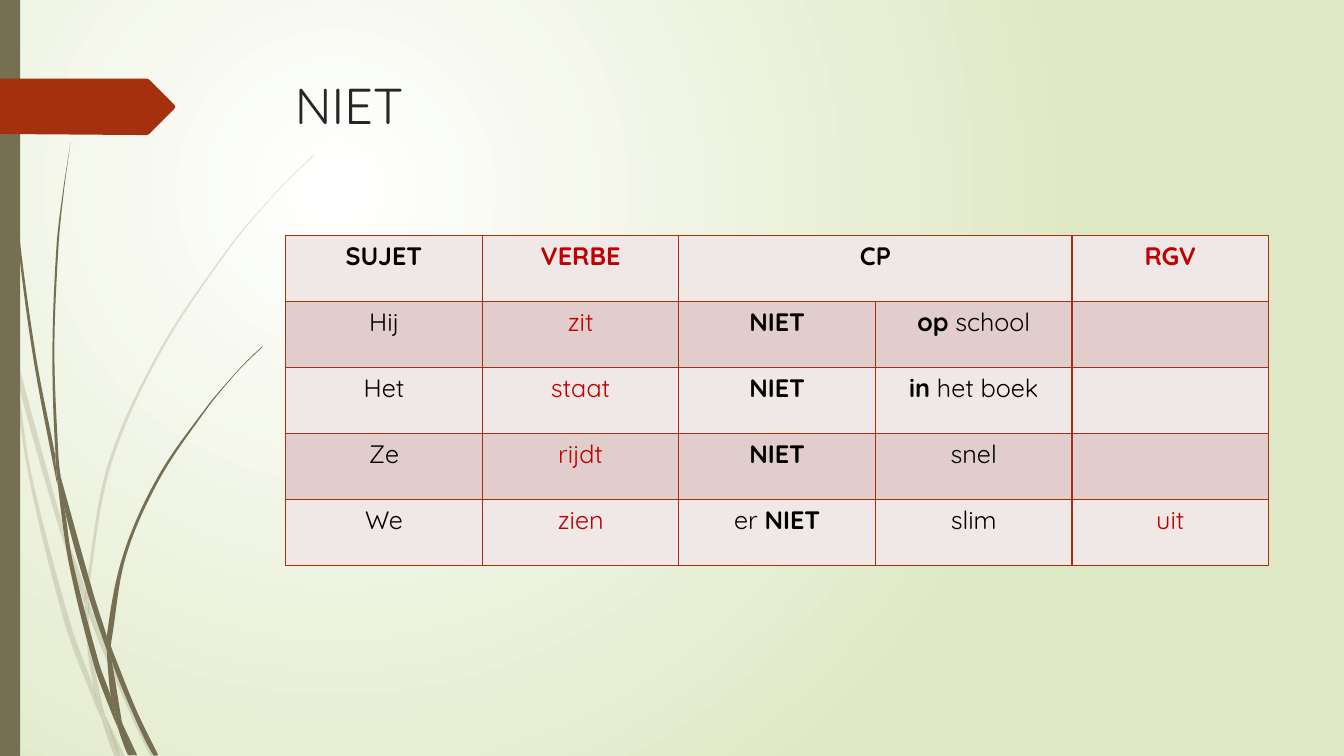
"""Build a Dutch grammar slide with a table on the place of NIET."""
from pptx import Presentation
from pptx.dml.color import RGBColor
from pptx.enum.shapes import MSO_SHAPE as Shape
from pptx.enum.text import MSO_ANCHOR as Anchor, MSO_AUTO_SIZE as AutoSize, PP_ALIGN as Align
from pptx.oxml import parse_xml
from pptx.oxml.ns import nsdecls
from pptx.util import Cm, Pt

FONT = "Quicksand"
CM_PER_UNIT = 2.54
COLORS = {
    "olive": "766F54", "rust": "A53010", "red": "C00000", "black": "000000",
    "title": "262626", "light": "F0E8E7", "dark": "E1CDCC",
    "center": "FFFFFF", "edge": "DFE8C4",
}
TITLE = "NIET"
ROWS = [
    ("*SUJET*", "*VERBE*", "*CP*", "", "*RGV*"),
    ("Hij", "zit", "*NIET*", "*op* school", ""),
    ("Het", "staat", "*NIET*", "*in* het boek", ""),
    ("Ze", "rijdt", "*NIET*", "snel", ""),
    ("We", "zien", "er *NIET*", "slim", "uit"),
]
COLUMN_COLORS = ("black", "red", "black", "black", "red")
PALE_GRASS = [
    [(0.11, 3.5), (0.09, 3.22), (0, 2.82), (0, 2.99), (0.1, 3.44)],
    [(0.58, 5.22), (0.84, 5.99), (0.85, 5.86), (0.62, 5.2), (0.14, 3.45), (0.17, 3.76)],
    [(0.92, 6.07), (0.88, 5.96), (0.88, 6.1), (1.23, 6.94), (1.5, 7.51), (1.55, 7.51),
     (1.27, 6.92)],
    [(1.19, 7.51), (1.24, 7.51), (1.05, 7.11)],
    [(0.93, 6.83), (0.7, 6.19), (0.31, 4.69), (0.17, 3.76), (0.11, 3.5), (0.28, 4.7),
     (0.65, 6.21), (0.92, 6.93), (1.01, 7.14), (0.99, 7.07)],
    [(0.84, 5.99), (0.87, 6.46), (0.93, 6.83), (0.96, 6.92), (1.05, 7.11), (1.03, 7.06),
     (0.91, 6.46), (0.88, 6.1), (0.88, 6.08)],
    [(0.88, 5.84), (1.1, 4.62), (1.6, 3.49), (2.29, 2.45), (2.68, 1.98), (2.9, 1.75),
     (3.12, 1.54), (3.12, 1.53), (2.89, 1.75), (2.68, 1.97), (2.28, 2.44), (1.58, 3.48),
     (1.07, 4.61), (0.85, 5.84), (0.85, 5.86), (0.88, 5.96)],
    [(1.01, 7.14), (1.14, 7.51), (1.19, 7.51)],
    [(0.88, 6.08), (0.88, 6.1), (0.88, 5.96), (0.85, 5.86), (0.84, 5.99)],
    [(0.96, 6.92), (0.93, 6.83), (0.99, 7.07), (1.01, 7.14), (1.19, 7.51), (1.05, 7.11)],
]
DARK_GRASS = [
    [(0.07, 1.1), (0.17, 2.33), (0.33, 3.55), (0.56, 4.77), (0.57, 4.81), (0.55, 4.57),
     (0.55, 4.53), (0.36, 3.55), (0.19, 2.32), (0.08, 1.09), (0.05, 0.48), (0.04, 0),
     (0.03, 0), (0.04, 0.48)],
    [(0.88, 5.92), (1.06, 6.45), (1.06, 6.33), (1.06, 6.31), (0.93, 5.9), (0.6, 4.72),
     (0.64, 5.05)],
    [(1.13, 6.49), (1.1, 6.41), (1.11, 6.56), (1.32, 7.08), (1.52, 7.49), (1.57, 7.49),
     (1.36, 7.06)],
    [(1.1, 6.91), (0.98, 6.57), (0.72, 5.56), (0.64, 5.05), (0.57, 4.77), (0.68, 5.57),
     (0.93, 6.59), (1.11, 7.08), (1.17, 7.22), (1.16, 7.17)],
    [(0.6, 4.72), (0.58, 4.53), (0.54, 3.49), (0.58, 2.45), (0.63, 1.93), (0.7, 1.41),
     (0.62, 1.93), (0.56, 2.45), (0.52, 3.49), (0.55, 4.49)],
    [(1.33, 7.49), (1.36, 7.49), (1.22, 7.19)],
    [(0.57, 4.77), (0.64, 5.05), (0.6, 4.72), (0.55, 4.49), (0.55, 4.53)],
    [(1.11, 6.33), (1.25, 5.52), (1.58, 4.76), (2.05, 4.06), (2.31, 3.74), (2.45, 3.59),
     (2.61, 3.44), (2.6, 3.44), (2.45, 3.58), (2.31, 3.73), (2.04, 4.05), (1.56, 4.74),
     (1.22, 5.51), (1.06, 6.31), (1.1, 6.41)],
    [(1.17, 7.22), (1.27, 7.49), (1.31, 7.49)],
    [(1.06, 6.45), (1.1, 6.91), (1.16, 7.06), (1.22, 7.19), (1.21, 7.16), (1.11, 6.56),
     (1.09, 6.51)],
    [(1.06, 6.45), (1.09, 6.51), (1.11, 6.56), (1.1, 6.41), (1.06, 6.31), (1.06, 6.33)],
    [(1.16, 7.06), (1.1, 6.91), (1.16, 7.17), (1.17, 7.22), (1.3, 7.49), (1.33, 7.49),
     (1.22, 7.19)],
]
ARROW = [(1.73, 1.08), (1.48, 1.33), (1.46, 1.34), (1.36, 1.34), (0, 1.33), (0, 0.78),
         (1.36, 0.78), (1.46, 0.78), (1.48, 0.79), (1.73, 1.04), (1.74, 1.06)]


def rgb(name):
    return RGBColor.from_string(COLORS[name])


def write(tf, text, size=18, color="black", align=Align.CENTER):
    """Write text in one paragraph; parts between asterisks are bold."""
    p = tf.paragraphs[0]
    p.alignment = align
    for i, part in enumerate(text.split("*")):
        if part:
            r = p.add_run()
            r.text = part
            r.font.name, r.font.size = FONT, Pt(size)
            r.font.bold = i % 2 == 1
            r.font.color.rgb = rgb(color)


def paint(sp, color, alpha=100):
    sp.shadow.inherit = False
    sp.fill.solid()
    sp.fill.fore_color.rgb = rgb(color)
    sp.line.fill.background()
    if alpha < 100:
        clr = sp.element.spPr.xpath("./a:solidFill/a:srgbClr")[0]
        clr.append(parse_xml(f'<a:alpha {nsdecls("a")} val="{alpha * 1000}"/>'))


def add_outline(s, pts):
    corners = [(Cm(x * CM_PER_UNIT), Cm(y * CM_PER_UNIT)) for x, y in pts]
    builder = s.shapes.build_freeform(*corners[0], scale=1.0)
    builder.add_line_segments(corners[1:] + corners[:1], close=True)
    return builder.convert_to_shape()


def direction(before, here, after):
    """Return the unit tangent at a point, or zero at a sharp tip."""
    turn = ((here - before).conjugate() * (after - here)).real
    return (after - before) / abs(after - before) if turn > 0 else 0


def bend(sp):
    """Turn the straight sides of an outline into smooth curves."""
    pts = [complex(int(pt.get("x")), int(pt.get("y")))
           for pt in sp.element.xpath(".//a:path//a:pt")][:-1]
    n = len(pts)
    tangents = [direction(pts[i - 1], pts[i], pts[(i + 1) % n]) for i in range(n)]
    for i, side in enumerate(sp.element.xpath(".//a:path/a:lnTo")):
        j = (i + 1) % n
        reach = abs(pts[j] - pts[i]) / 3
        stops = (pts[i] + tangents[i] * reach, pts[j] - tangents[j] * reach, pts[j])
        xml = "".join(f'<a:pt x="{round(z.real)}" y="{round(z.imag)}"/>' for z in stops)
        side.getparent().replace(side, parse_xml(
            f'<a:cubicBezTo {nsdecls("a")}>{xml}</a:cubicBezTo>'))


def add_background(s):
    fill = s.background.fill
    fill.gradient()
    for stop, name in zip(fill.gradient_stops, ("center", "edge")):
        stop.color.rgb = rgb(name)
    lin = s.element.xpath(".//p:bg//a:lin")[0]
    lin.getparent().replace(lin, parse_xml(
        f'<a:path {nsdecls("a")} path="circle">'
        '<a:fillToRect l="50000" t="50000" r="100000" b="100000"/></a:path>'))


def add_borders(cell):
    tc_pr = cell._tc.get_or_add_tcPr()
    for side in "LRTB":
        tc_pr.append(parse_xml(
            f'<a:ln{side} {nsdecls("a")} w="12700"><a:solidFill>'
            f'<a:srgbClr val="{COLORS["rust"]}"/></a:solidFill></a:ln{side}>'))


def add_grammar_table(s):
    table = s.shapes.add_table(len(ROWS), len(ROWS[0]), Cm(7.2), Cm(5.93),
                               Cm(24.77), Cm(8.32)).table
    for i, row in enumerate(ROWS):
        for j, text in enumerate(row):
            cell = table.cell(i, j)
            add_borders(cell)
            cell.fill.solid()
            cell.fill.fore_color.rgb = rgb("dark" if i % 2 else "light")
            write(cell.text_frame, text, color=COLUMN_COLORS[j])
    table.cell(0, 2).merge(table.cell(0, 3))


def main():
    prs = Presentation()
    prs.slide_width, prs.slide_height = Cm(33.87), Cm(19.05)
    s = prs.slides.add_slide(prs.slide_layouts[5])
    add_background(s)
    for grass, alpha in ((PALE_GRASS, 20), (DARK_GRASS, 100)):
        for pts in grass:
            piece = add_outline(s, pts)
            bend(piece)
            paint(piece, "olive", alpha)
    paint(s.shapes.add_shape(Shape.RECTANGLE, 0, 0, Cm(0.51), Cm(19.05)), "olive")
    paint(add_outline(s, ARROW), "rust")

    title = s.shapes.title
    title.left, title.top, title.width, title.height = Cm(7.18), Cm(1.73), Cm(24.77), Cm(3.56)
    tf = title.text_frame
    tf.auto_size, tf.vertical_anchor = AutoSize.NONE, Anchor.TOP
    write(tf, TITLE, size=36, color="title", align=Align.LEFT)
    add_grammar_table(s)
    prs.save("out.pptx")


if __name__ == "__main__":
    main()
